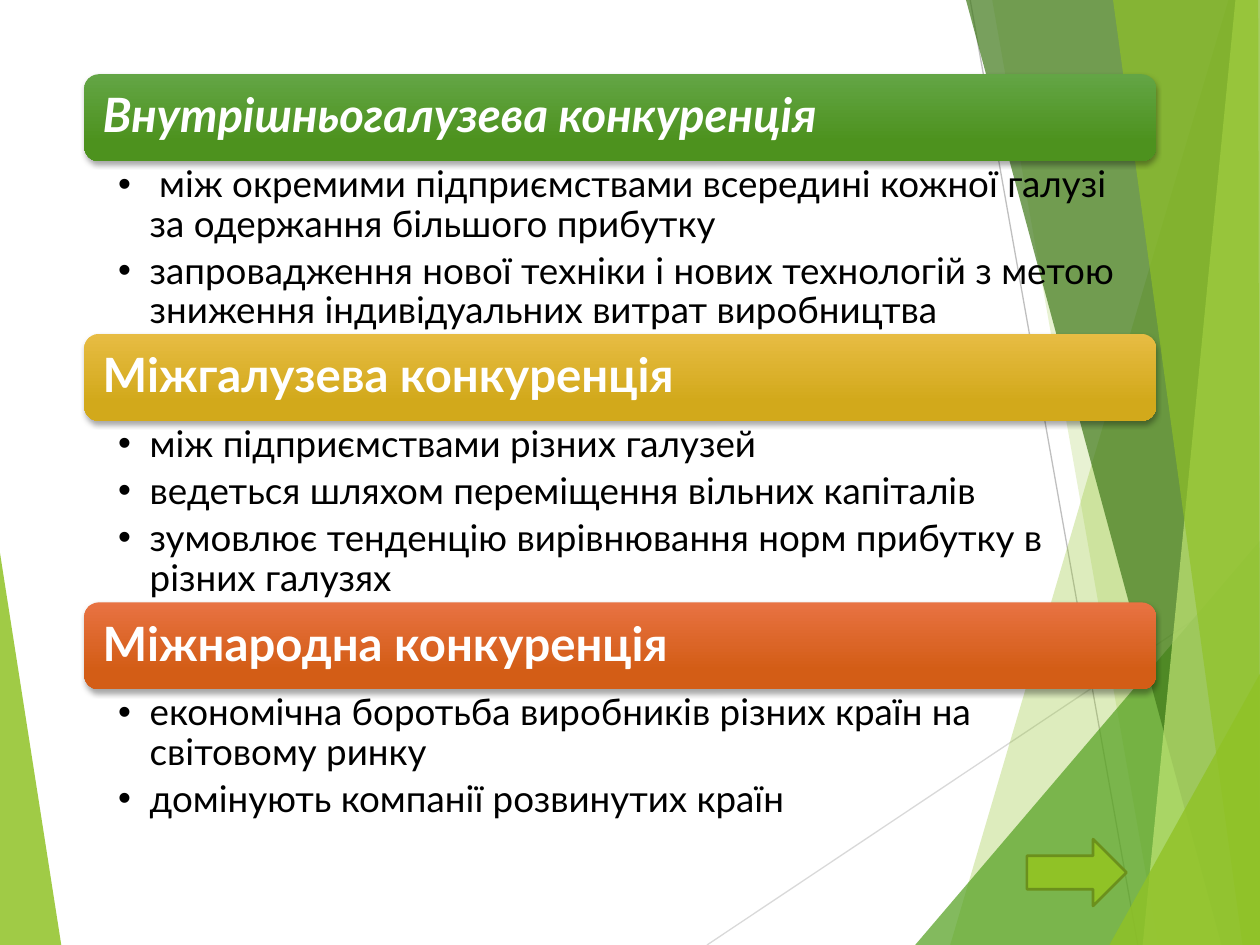
import pptx
import pptx.dml.color
import pptx.enum.shapes
import pptx.enum.text
import pptx.oxml.ns
import pptx.util
import lxml.etree

Pt = pptx.util.Pt
RGBColor = pptx.dml.color.RGBColor
Shape = pptx.enum.shapes.MSO_SHAPE
Anchor = pptx.enum.text.MSO_ANCHOR
qn = pptx.oxml.ns.qn

WIDTH, HEIGHT = 720, 540
FONT = "Lato"
WHITE = RGBColor(0xFF, 0xFF, 0xFF)
BLACK = RGBColor(0, 0, 0)
LIME = RGBColor(0x90, 0xC2, 0x26)
PALE_LIME = RGBColor(0xC0, 0xE4, 0x74)
GREEN = RGBColor(0x54, 0xA0, 0x21)
DARK_GREEN = RGBColor(0x3F, 0x78, 0x19)
ARROW_EDGE = RGBColor(0x6B, 0x90, 0x1C)
LIGHT_GREY = RGBColor(0xD9, 0xD9, 0xD9)
GREY = RGBColor(0xBF, 0xBF, 0xBF)

# Sections: heading, italic, gradient colours, body height, bullets
SECTIONS = [
    ("Внутрішньогалузева конкуренція", True,
     (RGBColor(0x63, 0xA5, 0x45), RGBColor(0x4D, 0x92, 0x1E)), 98.7,
     [" між окремими підприємствами всередині кожної галузі за одержання більшого прибутку",
      "запровадження нової техніки і нових технологій з метою зниження індивідуальних витрат виробництва"]),
    ("Міжгалузева конкуренція", False,
     (RGBColor(0xE7, 0xBC, 0x43), RGBColor(0xD2, 0xA9, 0x1B)), 103.7,
     ["між підприємствами різних галузей",
      "ведеться шляхом переміщення вільних капіталів",
      "зумовлює тенденцію вирівнювання норм прибутку в різних галузях"]),
    ("Міжнародна конкуренція", False,
     (RGBColor(0xE8, 0x72, 0x42), RGBColor(0xD3, 0x5D, 0x16)), 77,
     ["економічна боротьба виробників різних країн на світовому ринку",
      "домінують компанії розвинутих країн"]),
]
LEFT, TOP, SECTION_WIDTH, BAND_HEIGHT = 48.2, 42.4, 612.5, 49.7

# Background lines: start, end, colour
LINES = [
    ((404, HEIGHT), (WIDTH, 329), LIGHT_GREY),
    ((554.4, 0), (650.2, HEIGHT), GREY),
]
# Background facets: corners, colour, opacity in percent
LEFT_FACET = ([(0, 316), (35.3, HEIGHT), (0, HEIGHT)], LIME, 85)
RIGHT_FACETS = [
    ([(702, 0), (543, HEIGHT), (WIDTH, HEIGHT), (WIDTH, 0)], LIME, 30),
    ([(567.4, 0), (661.7, HEIGHT), (WIDTH, HEIGHT), (WIDTH, 0)], LIME, 20),
    ([(522.7, HEIGHT), (WIDTH, 309), (WIDTH, HEIGHT)], GREEN, 72),
    ([(552.2, 0), (698.4, HEIGHT), (WIDTH, HEIGHT), (WIDTH, 0)], DARK_GREEN, 70),
    ([(706.3, 0), (653, HEIGHT), (WIDTH, HEIGHT), (WIDTH, 0)], PALE_LIME, 70),
    ([(635.8, 0), (710, HEIGHT), (WIDTH, HEIGHT), (718.6, 0)], LIME, 65),
    ([(634.3, HEIGHT), (WIDTH, 385.2), (WIDTH, HEIGHT)], LIME, 80),
]


def add_child(parent, tag, **attributes):
    values = {name: str(value) for name, value in attributes.items()}
    return lxml.etree.SubElement(parent, qn(tag), values)


def add_facet(page, corners, color, opacity):
    builder = page.shapes.build_freeform(*corners[0], scale=12700)
    builder.add_line_segments(corners[1:], close=True)
    facet = builder.convert_to_shape()
    facet.shadow.inherit = False
    facet.line.fill.background()
    facet.fill.solid()
    facet.fill.fore_color.rgb = color
    color_node = facet._element.spPr.find(qn("a:solidFill"))[0]
    add_child(color_node, "a:alpha", val=opacity * 1000)


def add_line(page, start, end, color):
    line = page.shapes.add_connector(
        pptx.enum.shapes.MSO_CONNECTOR.STRAIGHT, *map(Pt, start + end))
    line.line.color.rgb = color
    line.line.width = Pt(0.75)
    add_child(line._element.spPr, "a:effectLst")


def set_frame(frame, left, top, right, bottom, anchor):
    frame.word_wrap = True
    frame.margin_left, frame.margin_top = Pt(left), Pt(top)
    frame.margin_right, frame.margin_bottom = Pt(right), Pt(bottom)
    frame.vertical_anchor = anchor


def add_span(para, text, size, color, bold=False, italic=False):
    para.alignment = pptx.enum.text.PP_ALIGN.LEFT
    para.line_spacing = 0.9
    span = para.add_run()
    span.text = text
    span.font.name, span.font.size = FONT, Pt(size)
    span.font.bold, span.font.italic = bold, italic
    span.font.color.rgb = color


def add_band(page, top, heading, italic, colors):
    band = page.shapes.add_shape(
        Shape.ROUNDED_RECTANGLE, Pt(LEFT), Pt(top), Pt(SECTION_WIDTH), Pt(BAND_HEIGHT))
    band.fill.gradient()
    band.fill.gradient_angle = 270
    for stop, position, color in zip(band.fill.gradient_stops, (0, 0.78), colors):
        stop.position = position
        stop.color.rgb = color
    band.line.fill.background()
    # Soft shadow below the band
    band.shadow.inherit = False
    effects = band._element.spPr.find(qn("a:effectLst"))
    shadow = add_child(effects, "a:outerShdw", blurRad=int(Pt(3)), dist=int(Pt(2)),
                       dir=5400000, rotWithShape=0)
    add_child(add_child(shadow, "a:srgbClr", val="000000"), "a:alpha", val=35000)
    set_frame(band.text_frame, 8.1, 8.1, 8.1, 8.1, Anchor.MIDDLE)
    add_span(band.text_frame.paragraphs[0], heading, 27, WHITE, True, italic)


def add_bullets(page, top, height, bullets):
    box = page.shapes.add_textbox(Pt(LEFT), Pt(top), Pt(SECTION_WIDTH), Pt(height))
    frame = box.text_frame
    set_frame(frame, 19.4, 2.7, 15.1, 2.7, Anchor.TOP)
    for index, text in enumerate(bullets):
        para = frame.add_paragraph() if index else frame.paragraphs[0]
        add_span(para, text, 21, BLACK)
        para.space_after = Pt(4.2)
        properties = para._p.get_or_add_pPr()
        properties.set("marL", str(int(Pt(18))))
        properties.set("indent", str(int(Pt(-18))))
        add_child(properties, "a:buFont", typeface="Arial")
        add_child(properties, "a:buChar", char="•")


def main():
    deck = pptx.Presentation()
    deck.slide_width, deck.slide_height = Pt(WIDTH), Pt(HEIGHT)
    page = deck.slides.add_slide(deck.slide_layouts[6])

    # Faceted background
    add_facet(page, *LEFT_FACET)
    for line in LINES:
        add_line(page, *line)
    for facet in RIGHT_FACETS:
        add_facet(page, *facet)

    # Headed sections, stacked without gaps
    top = TOP
    for heading, italic, colors, body_height, bullets in SECTIONS:
        add_band(page, top, heading, italic, colors)
        add_bullets(page, top + BAND_HEIGHT, body_height, bullets)
        top += BAND_HEIGHT + body_height

    # Arrow to the next page
    arrow = page.shapes.add_shape(
        Shape.RIGHT_ARROW, Pt(586.8), Pt(479.5), Pt(56.9), Pt(38.2))
    arrow.shadow.inherit = False
    arrow.fill.solid()
    arrow.fill.fore_color.rgb = LIME
    arrow.line.color.rgb = ARROW_EDGE
    arrow.line.width = Pt(1.5)

    deck.save("out.pptx")


if __name__ == "__main__":
    main()
